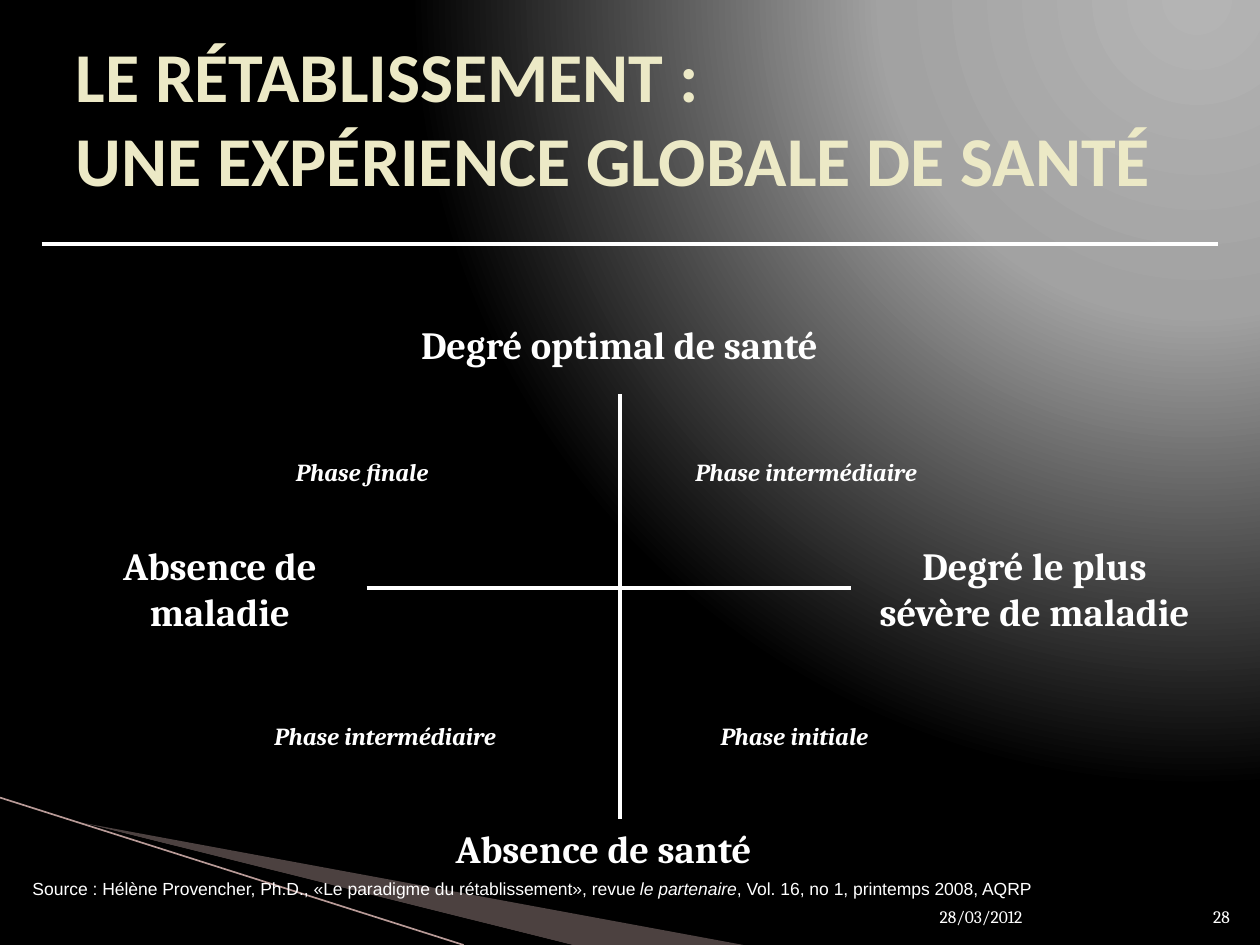
from lxml import etree
from pptx import Presentation
from pptx.dml.color import RGBColor
from pptx.enum.shapes import MSO_CONNECTOR as CONN
from pptx.enum.text import MSO_ANCHOR as ANCHOR, MSO_AUTO_SIZE as AUTO, PP_ALIGN as ALIGN
from pptx.oxml.ns import qn
from pptx.util import Inches, Pt

WHITE = "FFFFFF"
HEADING = {"size": Pt(22), "name": "Cambria", "bold": True}
PHASE = {"size": Pt(14), "name": "Cambria", "bold": True, "italic": True}
SOURCE = {"size": Pt(10), "name": "Arial"}
FOOTER = {"size": Pt(10), "name": "Cambria"}


def rgb(value):
    """Return the colour for a hex string."""
    return RGBColor.from_string(value)


def format_font(font, fmt, color=WHITE):
    """Apply a dict of font values and a colour."""
    for key, value in fmt.items():
        setattr(font, key, value)
    font.color.rgb = rgb(color)


def add_text(slide, box, runs, fmt, align=ALIGN.LEFT, anchor=ANCHOR.TOP):
    """Add a wrapped text box made of (text, extra format) runs."""
    sp = slide.shapes.add_textbox(*map(Inches, box))
    tf = sp.text_frame
    tf.word_wrap = True
    tf.vertical_anchor = anchor
    tf.auto_size = AUTO.SHAPE_TO_FIT_TEXT if anchor == ANCHOR.TOP else AUTO.NONE
    p = tf.paragraphs[0]
    p.alignment = align
    for text, extra in runs:
        r = p.add_run()
        r.text = text
        format_font(r.font, {**fmt, **extra})
    return sp


def add_line(slide, start, end, color=WHITE, width=2.25):
    """Add a straight line without a shadow."""
    line = slide.shapes.add_connector(CONN.STRAIGHT, *map(Inches, (*start, *end)))
    line.line.color.rgb = rgb(color)
    line.line.width = Pt(width)
    etree.SubElement(line._element.spPr, qn("a:effectLst"))
    return line


def add_wedge(slide, points, color, alpha=100):
    """Add a closed, filled outline with the given opacity in percent."""
    corners = [tuple(map(Inches, point)) for point in points]
    builder = slide.shapes.build_freeform(*corners[0])
    builder.add_line_segments(corners[1:], close=True)
    sp = builder.convert_to_shape()
    sp.shadow.inherit = False
    sp.fill.solid()
    sp.fill.fore_color.rgb = rgb(color)
    sp.line.fill.background()
    if alpha < 100:
        clr = sp._element.spPr.find(".//" + qn("a:srgbClr"))
        etree.SubElement(clr, qn("a:alpha"), val=str(alpha * 1000))


def set_background(slide):
    """Fill the background with a circular gradient from the upper right."""
    fill = slide.background.fill
    fill.gradient()
    grad = slide._element.find(".//" + qn("a:gradFill"))
    for child in list(grad):
        grad.remove(child)
    stops = etree.SubElement(grad, qn("a:gsLst"))
    for pos, color in ((0, "B4B4B4"), (40, "A2A2A2"), (100, "000000")):
        stop = etree.SubElement(stops, qn("a:gs"), pos=str(pos * 1000))
        etree.SubElement(stop, qn("a:srgbClr"), val=color)
    circle = etree.SubElement(grad, qn("a:path"))
    circle.set("path", "circle")
    focus = etree.SubElement(circle, qn("a:fillToRect"))
    for side, percent in zip("ltrb", (95, -106, 5, 206)):
        focus.set(side, str(percent * 1000))


def add_corner(slide, left, top, bottom):
    """Draw the decorative wedges and line in the lower left corner."""
    tip = (left + 0.65, top + 0.2)
    add_wedge(slide, [tip, (left + 5.9, bottom), (left + 4.54, bottom)], "BFA4A1", 40)
    add_wedge(slide, [tip, (left + 4.54, bottom), (left + 3.7, bottom)], "000000")
    add_line(slide, (left, top), (left + 3.68, bottom), "B89A97", 0.95)


def add_title(slide, box):
    """Place and format the title and draw the rule below it."""
    title = slide.shapes.title
    title.left, title.top, title.width, title.height = map(Inches, box)
    tf = title.text_frame
    tf.text = "LE RÉTABLISSEMENT : \vUNE EXPÉRIENCE GLOBALE DE SANTÉ"
    tf.word_wrap = True
    tf.auto_size = AUTO.NONE
    tf.vertical_anchor = ANCHOR.MIDDLE
    p = tf.paragraphs[0]
    p.alignment = ALIGN.LEFT
    fmt = {"size": Pt(40), "name": "Calibri", "bold": True}
    for r in p.runs:
        format_font(r.font, fmt, "ECE9C6")
    left, top, width, height = box
    rule = top + height + 0.39
    add_line(slide, (left - 0.17, rule), (left + width + 0.17, rule))


def add_quadrants(slide, box):
    """Draw the health and illness axes with their poles and phases."""
    left, top, width, height = box
    middle = left + 4.34
    poles = [
        ("Degré optimal de santé", (middle - 2.38, top, 4.75, 0.47)),
        ("Absence de santé", (middle - 2.09, top + height - 0.47, 3.92, 0.47)),
        ("Absence de maladie", (left, top + 1.75, 2.33, 0.84)),
        ("Degré le plus sévère de maladie", (left + width - 2.92, top + 1.75, 2.92, 0.84)),
    ]
    _, _, healthy, ill = [
        add_text(slide, place, [(text, {})], HEADING, ALIGN.CENTER) for text, place in poles
    ]
    upper, lower = top + 1.08, top + 3.17
    phases = [
        ("Phase finale", middle - 2.67, upper, 1.58),
        ("Phase intermédiaire", middle + 0.5, upper, 2.83),
        ("Phase initiale", middle + 0.7, lower, 2.42),
        ("Phase intermédiaire", middle - 2.84, lower, 3),
    ]
    for text, x, y, w in phases:
        add_text(slide, (x, y, w, 0.34), [(text, {})], PHASE)
    add_line(slide, (middle, top + 0.63), (middle, top + height - 0.47))
    axis = add_line(slide, (left + 2.33, top + 2.17), (left + width - 2.92, top + 2.17))
    axis.begin_connect(healthy, 3)
    axis.end_connect(ill, 1)


def add_footer(slide, box):
    """Place the source, the date and the slide number."""
    left, top, width, height = box
    source = [
        ("Source : Hélène Provencher, Ph.D., «Le paradigme du rétablissement», revue ", {}),
        ("le partenaire", {"italic": True}),
        (", Vol. 16, no 1, printemps 2008, AQRP", {}),
    ]
    add_text(slide, (left, top, 9.33, 0.27), source, SOURCE)
    right, y = left + width, top + height - 0.4
    add_text(slide, (right - 2.5, y, 2.1, 0.4), [("28/03/2012", {})], FOOTER,
             anchor=ANCHOR.BOTTOM)
    add_text(slide, (right - 0.4, y, 0.4, 0.4), [("28", {})], FOOTER,
             ALIGN.RIGHT, ANCHOR.BOTTOM)


def main():
    """Build the slide and save it."""
    prs = Presentation()
    prs.slide_width, prs.slide_height = Inches(10), Inches(7.5)
    slide = prs.slides.add_slide(prs.slide_layouts[5])
    set_background(slide)
    add_corner(slide, 0, 6.33, 7.5)
    add_title(slide, (0.5, 0.3, 9, 1.25))
    add_quadrants(slide, (0.58, 2.5, 9.09, 4.47))
    add_footer(slide, (0.16, 6.92, 9.7, 0.49))
    prs.save("out.pptx")


if __name__ == "__main__":
    main()
